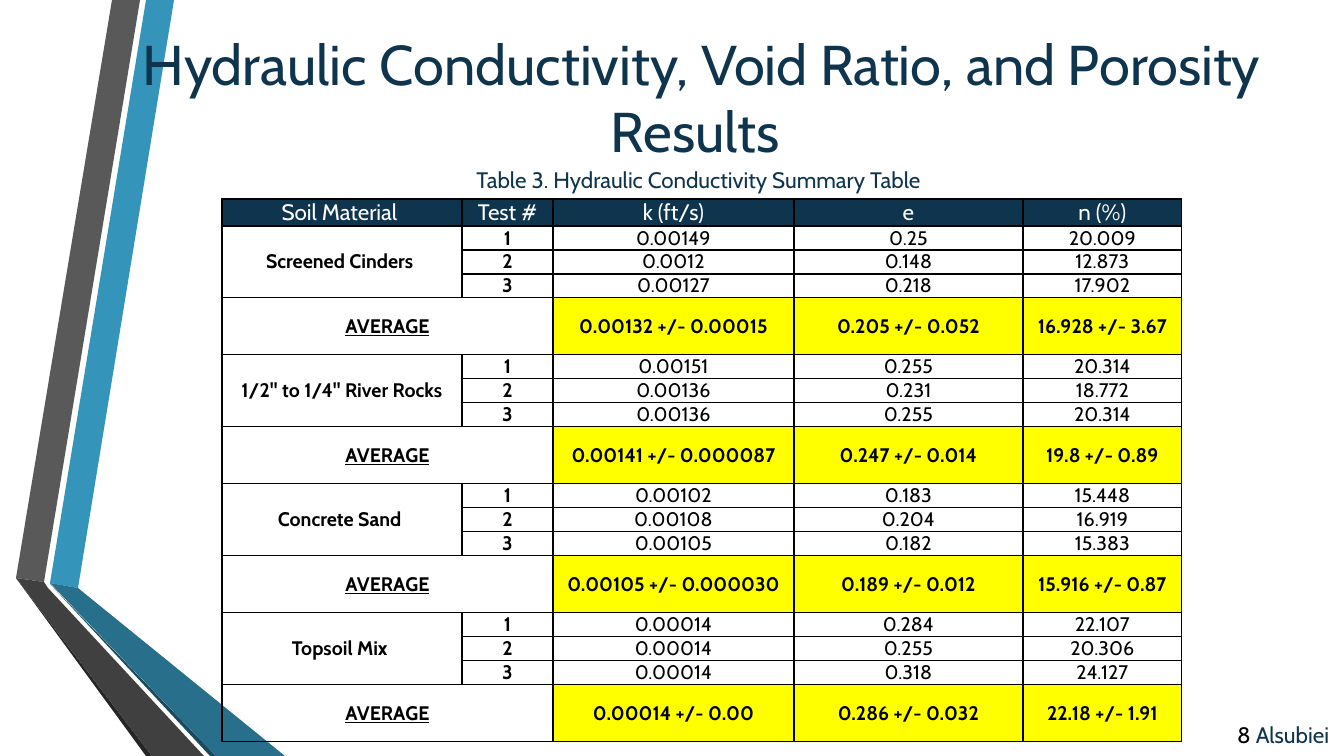
import dataclasses

import lxml.etree
import pptx
import pptx.dml.color
import pptx.enum.text
import pptx.oxml.ns
import pptx.util

ALIGN = pptx.enum.text.PP_ALIGN
ANCHOR = pptx.enum.text.MSO_ANCHOR
EMU_PER_PX = 914400 / 100.8


@dataclasses.dataclass(frozen=True)
class Theme:
    font: str = "Cabin"
    navy: str = "0E344E"
    black: str = "000000"
    white: str = "FFFFFF"
    highlight: str = "FFFF00"
    blue: str = "3494BA"
    blue_fold: str = "276F8B"
    blue_edge: str = "1A4A5D"
    gray: str = "595959"
    gray_fold: str = "404040"
    gray_edge: str = "262626"
    title_size: int = 40
    label_size: int = 16
    body_size: int = 14
    border_width: int = 1


THEME = Theme()

RIBBONS = [
    (THEME.blue, [(50, 583), (78, 588), (174, 0), (146, 0)]),
    (THEME.gray, [(140, 0), (112, 0), (16, 578), (44, 582)]),
    (THEME.gray_edge, [(16, 578), (146, 756), (152, 756)]),
    (THEME.blue_edge, [(50, 584), (210, 756), (216, 756)]),
    (THEME.blue_fold, [(50, 583), (216, 756), (285, 756), (78, 588)]),
    (THEME.gray_fold, [(204, 756), (48, 588), (44, 582), (16, 578), (152, 756)]),
]

HEADINGS = ["Soil Material ", "Test #", "k (ft/s)", "e", "n (%)"]
COLUMN_WIDTHS = [240, 91, 241, 229, 159]
HEADING_HEIGHT, TEST_HEIGHT, AVERAGE_HEIGHT = 27, 24, 57

# Each soil: name, one row per test, averages
SOILS = [
    ("Screened Cinders ",
     [("0.00149", "0.25", "20.009"),
      ("0.0012", "0.148", "12.873"),
      ("0.00127", "0.218", "17.902")],
     ("0.00132 +/- 0.00015", "0.205 +/- 0.052", "16.928 +/- 3.67")),
    ("1/2\" to 1/4\" River Rocks",
     [("0.00151", "0.255", "20.314"),
      ("0.00136", "0.231", "18.772"),
      ("0.00136", "0.255", "20.314")],
     ("0.00141 +/- 0.000087", "0.247 +/- 0.014", "19.8 +/- 0.89")),
    ("Concrete Sand ",
     [("0.00102", "0.183", "15.448"),
      ("0.00108", "0.204", "16.919"),
      ("0.00105", "0.182", "15.383")],
     ("0.00105 +/- 0.000030", "0.189 +/- 0.012", "15.916 +/- 0.87")),
    ("Topsoil Mix ",
     [("0.00014", "0.284", "22.107"),
      ("0.00014", "0.255", "20.306"),
      ("0.00014", "0.318", "24.127")],
     ("0.00014 +/- 0.00", "0.286 +/- 0.032", "22.18 +/- 1.91")),
]


def px(length):
    return pptx.util.Emu(round(length * EMU_PER_PX))


def rgb(color):
    return pptx.dml.color.RGBColor.from_string(color)


def format_run(run, size, color, bold=False, underline=False):
    run.font.name = THEME.font
    run.font.size = pptx.util.Pt(size)
    run.font.color.rgb = rgb(color)
    run.font.bold = bold
    run.font.underline = underline


def add_ribbons(slide, box):
    left, top = box[:2]
    for color, points in RIBBONS:
        builder = slide.shapes.build_freeform(*points[0], scale=EMU_PER_PX)
        builder.add_line_segments(points[1:], close=True)
        shape = builder.convert_to_shape(px(left), px(top))
        shape.shadow.inherit = False
        shape.fill.solid()
        shape.fill.fore_color.rgb = rgb(color)
        shape.line.fill.background()


def add_text(slide, box, parts, size, alignment=ALIGN.CENTER, anchor=ANCHOR.MIDDLE):
    """Place one paragraph made of (text, color) parts."""
    frame = slide.shapes.add_textbox(*map(px, box)).text_frame
    frame.word_wrap = True
    frame.vertical_anchor = anchor
    paragraph = frame.paragraphs[0]
    paragraph.alignment = alignment
    for text, color in parts:
        run = paragraph.add_run()
        run.text = text
        format_run(run, size, color)


def add_borders(cell):
    properties = cell._tc.get_or_add_tcPr()
    for side in ("a:lnL", "a:lnR", "a:lnT", "a:lnB"):
        line = lxml.etree.SubElement(properties, pptx.oxml.ns.qn(side))
        line.set("w", str(pptx.util.Pt(THEME.border_width)))
        fill = lxml.etree.SubElement(line, pptx.oxml.ns.qn("a:solidFill"))
        color = lxml.etree.SubElement(fill, pptx.oxml.ns.qn("a:srgbClr"))
        color.set("val", THEME.black)


def fill_cell(cell, text, size=THEME.body_size, color=THEME.black, fill=None,
              bold=False, underline=False):
    cell.text_frame.text = text
    paragraph = cell.text_frame.paragraphs[0]
    paragraph.alignment = ALIGN.CENTER
    for run in paragraph.runs:
        format_run(run, size, color, bold, underline)
    if fill:
        cell.fill.solid()
        cell.fill.fore_color.rgb = rgb(fill)


def fill_soil(table, first_row, soil):
    name, tests, averages = soil
    average_row = first_row + len(tests)
    table.cell(first_row, 0).merge(table.cell(average_row - 1, 0))
    fill_cell(table.cell(first_row, 0), name, bold=True)
    for number, values in enumerate(tests, 1):
        row = first_row + number - 1
        fill_cell(table.cell(row, 1), str(number), bold=True)
        for column, value in enumerate(values, 2):
            fill_cell(table.cell(row, column), value)
    table.rows[average_row].height = px(AVERAGE_HEIGHT)
    table.cell(average_row, 0).merge(table.cell(average_row, 1))
    fill_cell(table.cell(average_row, 0), "AVERAGE", bold=True, underline=True)
    for column, value in enumerate(averages, 2):
        fill_cell(table.cell(average_row, column), value,
                  fill=THEME.highlight, bold=True)


def add_results_table(slide, box):
    row_count = 1 + sum(len(tests) + 1 for _, tests, _ in SOILS)
    table = slide.shapes.add_table(row_count, len(HEADINGS), *map(px, box)).table
    table.first_row = table.horz_banding = False
    for column, width in zip(table.columns, COLUMN_WIDTHS):
        column.width = px(width)
    for row in table.rows:
        row.height = px(TEST_HEIGHT)
    table.rows[0].height = px(HEADING_HEIGHT)
    for cell in table.iter_cells():
        cell.margin_left = cell.margin_right = 0
        cell.margin_top = cell.margin_bottom = 0
        cell.vertical_anchor = ANCHOR.MIDDLE
        add_borders(cell)
        cell.fill.background()
    for column, heading in enumerate(HEADINGS):
        fill_cell(table.cell(0, column), heading, THEME.label_size,
                  THEME.white, THEME.navy)
    first_row = 1
    for soil in SOILS:
        fill_soil(table, first_row, soil)
        first_row += len(soil[1]) + 1


def main():
    presentation = pptx.Presentation()
    presentation.slide_width, presentation.slide_height = px(1344), px(756)
    slide = presentation.slides.add_slide(presentation.slide_layouts[6])
    add_ribbons(slide, (0, 0, 285, 756))
    add_text(slide, (128, 0, 1147, 194),
             [("Hydraulic Conductivity, Void Ratio, and Porosity Results ", THEME.navy)],
             THEME.title_size)
    add_text(slide, (1207, 714, 137, 42),
             [("8 ", THEME.black), ("Alsubiei ", THEME.navy)],
             THEME.label_size, alignment=ALIGN.RIGHT)
    add_text(slide, (462, 161, 473, 37),
             [("Table 3. Hydraulic Conductivity Summary Table", THEME.navy)],
             THEME.label_size, anchor=ANCHOR.TOP)
    add_results_table(slide, (222, 199, 960, 543))
    presentation.save("out.pptx")


if __name__ == "__main__":
    main()
